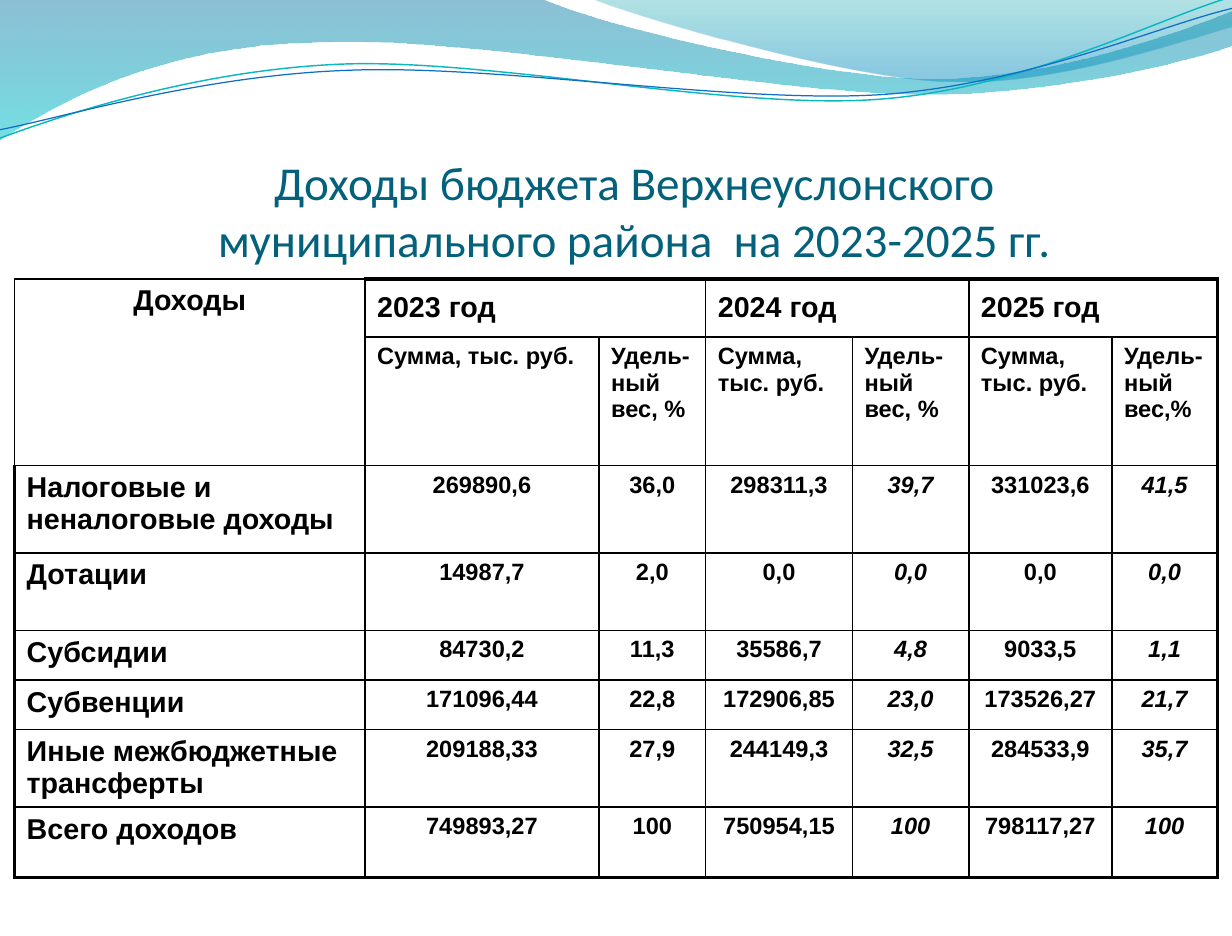
"""Build the slide with the district budget revenue table for 2023-2025."""
from lxml.etree import SubElement
from pptx import Presentation
from pptx.dml.color import RGBColor
from pptx.enum.text import MSO_ANCHOR as Anchor, PP_ALIGN as Align
from pptx.oxml.ns import qn
from pptx.util import Inches, Pt


def rgb(value):
    return RGBColor.from_string(value)


def draw_curve(start, segments, closed):
    builder = slide.shapes.build_freeform(Inches(start[0]), Inches(start[1]))
    builder.add_line_segments(
        [(Inches(x), Inches(y)) for segment in segments for x, y in segment], close=closed)
    curve = builder.convert_to_shape()
    curve.shadow.inherit = False
    outline = next(curve.element.iter(qn("a:path")))
    lines = iter(outline.findall(qn("a:lnTo")))
    for segment in segments:
        group = [next(lines) for node in segment]
        if len(group) == 3:
            bend = SubElement(outline, qn("a:cubicBezTo"))
            group[0].addprevious(bend)
            for line in group:
                bend.append(line[0])
                outline.remove(line)
    return curve


deck = Presentation()
deck.slide_width, deck.slide_height = Inches(10.16), Inches(7.72)
slide = deck.slides.add_slide(deck.slide_layouts[6])

waves = [
    ((-0.01, 0), [
        [(4.47, -0.01)],
        [(4.83, 0.17), (6.74, 0.65), (7.7, 0.65)],
        [(8.67, 0.65), (9.74, 0.26), (10.16, 0.09)],
        [(10.17, 0.37)],
        [(9.99, 0.45), (8.84, 0.78), (7.58, 0.78)],
        [(6.32, 0.77), (3.88, 0.29), (2.61, 0.35)],
        [(1.31, 0.37), (0.47, 0.85), (-0.01, 1.16)],
    ], [(0, "0074A1", 45), (1, "00C6CF", 55)]),
    ((4.87, -0.01), [
        [(5.18, 0.12), (6.93, 0.64), (7.81, 0.67)],
        [(8.69, 0.71), (9.77, 0.33), (10.16, 0.22)],
        [(10.16, 0)],
    ], [(0, "00A1A9", 30), (0.8, "008BBF", 45)]),
]
for start, segments, stops in waves:
    wave = draw_curve(start, segments, True)
    wave.line.fill.background()
    wave.fill.gradient()
    wave.fill.gradient_angle = 270
    for stop, (position, color, opacity) in zip(wave.fill.gradient_stops, stops):
        stop.position = position
        stop.color.rgb = rgb(color)
    for color_node, (position, color, opacity) in zip(
            wave.element.spPr.iter(qn("a:srgbClr")), stops):
        SubElement(color_node, qn("a:alpha"), val=str(opacity * 1000))

strands = [
    ((0, 1.14), [
        [(0.49, 0.96), (1.6, 0.58), (2.81, 0.53)],
        [(4.02, 0.48), (6.02, 0.91), (7.24, 0.82)],
        [(8.46, 0.73), (9.53, 0.16), (10.14, -0.02)],
    ], "0AB8BF", 0.85),
    ((0, 1.07), [
        [(0.48, 0.98), (1.66, 0.62), (2.88, 0.58)],
        [(4.09, 0.53), (6.07, 0.86), (7.28, 0.78)],
        [(8.5, 0.69), (9.56, 0.21), (10.16, 0.07)],
    ], "0F6FC6", 0.75),
]
for start, segments, color, width in strands:
    strand = draw_curve(start, segments, False)
    strand.fill.background()
    strand.line.color.rgb = rgb(color)
    strand.line.width = Pt(width)

title = slide.shapes.add_textbox(Inches(0.83), Inches(1.18), Inches(8.8), Inches(1.02)).text_frame
title.word_wrap = True
title.vertical_anchor = Anchor.BOTTOM
title.margin_left = title.margin_right = title.margin_bottom = 0
title.paragraphs[0].alignment = Align.CENTER
heading = title.paragraphs[0].add_run()
heading.text = "Доходы бюджета Верхнеуслонского муниципального района  на 2023-2025 гг."
heading.font.name, heading.font.size = "Calibri", Pt(28)
heading.font.color.rgb = rgb("04617B")

revenue = [
    ["Доходы", "2023 год", "", "2024 год", "", "2025 год", ""],
    ["", "Сумма, тыс. руб.", "Удель-ный вес, %", "Сумма, тыс. руб.", "Удель-ный вес, %",
     "Сумма, тыс. руб.", "Удель-ный вес,%"],
    ["Налоговые и неналоговые доходы", "269890,6", "36,0", "298311,3", "39,7", "331023,6", "41,5"],
    ["Дотации", "14987,7", "2,0", "0,0", "0,0", "0,0", "0,0"],
    ["Субсидии", "84730,2", "11,3", "35586,7", "4,8", "9033,5", "1,1"],
    ["Субвенции", "171096,44", "22,8", "172906,85", "23,0", "173526,27", "21,7"],
    ["Иные межбюджетные трансферты", "209188,33", "27,9", "244149,3", "32,5", "284533,9", "35,7"],
    ["Всего доходов", "749893,27", "100", "750954,15", "100", "798117,27", "100"],
]
column_widths = [2.89, 1.93, 0.88, 1.21, 0.96, 1.18, 0.87]
row_heights = [0.48, 1.06, 0.72, 0.64, 0.41, 0.41, 0.58, 0.58]
table = slide.shapes.add_table(len(row_heights), len(column_widths), Inches(0.12), Inches(2.3),
                               Inches(sum(column_widths)), Inches(sum(row_heights))).table
table.first_row = table.horz_banding = False
for column, width in zip(table.columns, column_widths):
    column.width = Inches(width)
for row, height in zip(table.rows, row_heights):
    row.height = Inches(height)
table.cell(0, 0).merge(table.cell(1, 0))
for year_col in (1, 3, 5):
    table.cell(0, year_col).merge(table.cell(0, year_col + 1))

last_row, last_col = len(row_heights) - 1, len(column_widths) - 1
for r, values in enumerate(revenue):
    for c, value in enumerate(values):
        cell = table.cell(r, c)
        thick_edges = {
            "a:lnL": c == 0 and r >= 2,
            "a:lnR": c + cell.span_width - 1 == last_col or c == last_col,
            "a:lnT": r == 0 and c >= 1,
            "a:lnB": r == last_row,
        }
        properties = cell._tc.get_or_add_tcPr()
        for edge, thick in thick_edges.items():
            border = SubElement(properties, qn(edge), w=str(Pt(2.25 if thick else 1)))
            SubElement(SubElement(border, qn("a:solidFill")), qn("a:srgbClr"), val="000000")
        if r == c == 0:
            cell.fill.solid()
            cell.fill.fore_color.rgb = rgb("FFFFFF")
        else:
            cell.fill.background()
        if not value:
            continue
        is_year = r == 0 and c > 0
        is_figure = r >= 2 and c > 0
        cell.vertical_anchor = Anchor.MIDDLE if is_year else Anchor.TOP
        cell.margin_bottom = Inches(0.02 if r == last_row - 1 else 0.05)
        paragraph = cell.text_frame.paragraphs[0]
        paragraph.alignment = Align.CENTER if is_figure or r == c == 0 else Align.LEFT
        run = paragraph.add_run()
        run.text = value
        run.font.name, run.font.bold = "Arial", True
        run.font.size = Pt(17 if r == 0 or c == 0 else 14)
        run.font.italic = is_figure and c in (4, 6)
        run.font.color.rgb = rgb("000000")

deck.save("out.pptx")
